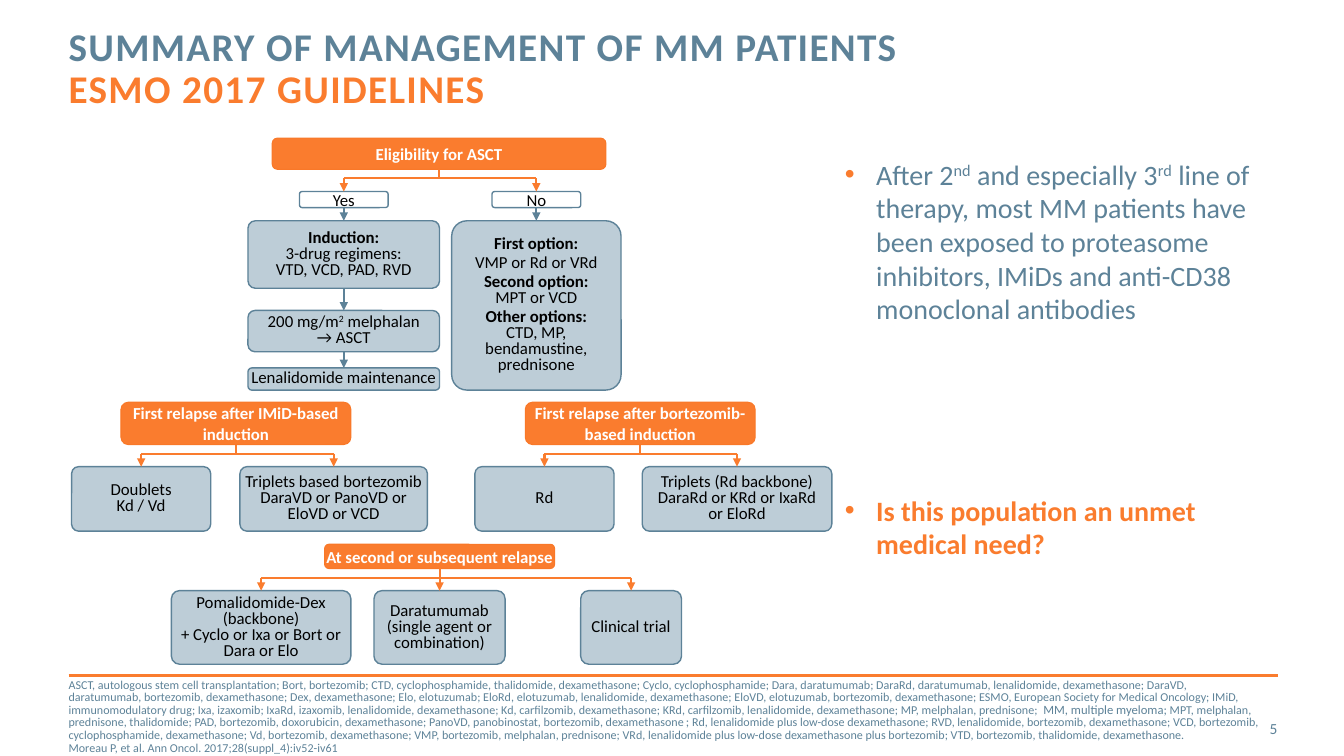
"""Build the slide on management of MM patients."""
from copy import deepcopy

from lxml import etree
from pptx import Presentation, util as u
from pptx.dml.color import RGBColor
from pptx.enum import shapes, text
from pptx.oxml.ns import qn

PX = 9144
THEME = {
    "font": "Calibri", "orange": "FA7C2E", "edge": "F97828", "slate": "5D8298",
    "mist": "BDCDD7", "white": "FFFFFF", "black": "000000",
    "title": 28, "body": 20, "label": 12, "note": 8.6, "note_large": 9, "number": 11,
}
HEADER = {"fill": "orange", "line": "edge", "weight": 0.75, "ink": "white", "bold": True, "spacing": 1.0}
ANSWER = {"fill": "white", "line": "slate", "weight": 1, "ink": "black", "bold": False, "spacing": 1.0}
STEP = dict(ANSWER, fill="mist", spacing=0.8)
BOLD, SUPER = {"bold": True}, {"baseline": "30000"}
CENTER, LEFT = text.PP_ALIGN.CENTER, text.PP_ALIGN.LEFT
TOP, MIDDLE = text.MSO_ANCHOR.TOP, text.MSO_ANCHOR.MIDDLE

NOTES = [
    ("ASCT, autologous stem cell transplantation; Bort, bortezomib; CTD, cyclophosphamide, thalidomide, "
     "dexamethasone; Cyclo, cyclophosphamide; Dara, daratumumab; DaraRd, daratumumab, lenalidomide, "
     "dexamethasone; DaraVD, daratumumab, bortezomib, dexamethasone; Dex, dexamethasone; Elo, elotuzumab; "
     "EloRd, elotuzumab, lenalidomide, dexamethasone; EloVD, elotuzumab, bortezomib, dexamethasone; ESMO, "
     "European Society for Medical Oncology; IMiD, immunomodulatory drug; Ixa, izaxomib; IxaRd, izaxomib, "
     "lenalidomide, dexamethasone; Kd, carfilzomib, dexamethasone; KRd, carfilzomib, lenalidomide, "
     "dexamethasone; MP, melphalan, prednisone; ", {}),
    ("MM, multiple myeloma; ", {"size": "note_large"}),
    ("MPT, melphalan, prednisone, thalidomide; PAD, bortezomib, doxorubicin, dexamethasone; PanoVD, "
     "panobinostat, bortezomib, dexamethasone", {}),
    ("; ", {"size": "note_large"}),
    ("Rd, lenalidomide plus low-dose dexamethasone; RVD, lenalidomide, bortezomib, dexamethasone; VCD, "
     "bortezomib, cyclophosphamide, dexamethasone; Vd, bortezomib, dexamethasone; VMP, bortezomib, melphalan, "
     "prednisone; VRd, lenalidomide plus low-dose dexamethasone plus bortezomib; VTD, bortezomib, thalidomide, "
     "dexamethasone.\nMoreau P, et al. Ann Oncol. 2017;28(suppl_4):iv52-iv61", {}),
]


def color(name):
    """Return a theme colour."""
    return RGBColor.from_string(THEME[name])


def apply(target, values):
    """Set each named attribute on the target."""
    for name, value in values.items():
        setattr(target, name, value)


def place(shape, box):
    """Move a shape to a box given in px."""
    apply(shape, dict(zip(("left", "top", "width", "height"), (side * PX for side in box))))


def write(para, spans, style):
    """Add formatted spans to a paragraph, with breaks at newlines."""
    for words, changes in spans:
        look = {**style, **changes}
        for row, line in enumerate(words.split("\n")):
            if row:
                para.add_line_break()
                para._p[-1].append(deepcopy(span._r.rPr))
            if not line:
                continue
            span = para.add_run()
            span.text = line
            apply(span.font, {"name": THEME["font"], "size": u.Pt(THEME[look["size"]]),
                              "bold": look.get("bold", False)})
            span.font.color.rgb = color(look["ink"])
            for name in ("spc", "baseline"):
                if name in look:
                    span._r.rPr.set(name, look[name])


def fill_frame(shape, paras, style, anchor, layout):
    """Write paragraphs into a shape without insets."""
    frame = shape.text_frame
    apply(frame, {"word_wrap": True, "auto_size": text.MSO_AUTO_SIZE.NONE, "vertical_anchor": anchor,
                  "margin_left": 0, "margin_top": 0, "margin_right": 0, "margin_bottom": 0})
    for row, spans in enumerate(paras):
        para = frame.add_paragraph() if row else frame.paragraphs[0]
        apply(para, layout)
        write(para, spans, style)
    return frame.paragraphs


def set_bullet(para, hang, mark=None):
    """Give a paragraph a hanging bullet, or none."""
    props = para._p.get_or_add_pPr()
    props.set("marL", str(hang * PX))
    props.set("indent", str(-hang * PX))
    if mark:
        tint = etree.SubElement(props, qn("a:buClr"))
        etree.SubElement(tint, qn("a:srgbClr"), val=THEME["orange"])
        etree.SubElement(props, qn("a:buChar"), char=mark)
    else:
        etree.SubElement(props, qn("a:buNone"))


def add_node(page, box, paras, look, corner=0.17, after=0):
    """Draw a rounded box with centred text."""
    node = page.shapes.add_shape(shapes.MSO_SHAPE.ROUNDED_RECTANGLE, *(side * PX for side in box))
    node.adjustments[0] = corner
    node.shadow.inherit = False
    node.fill.solid()
    node.fill.fore_color.rgb = color(look["fill"])
    node.line.color.rgb = color(look["line"])
    node.line.width = u.Pt(look["weight"])
    paras = [[(paras, {})]] if isinstance(paras, str) else paras
    fill_frame(node, paras, {"size": "label", "ink": look["ink"], "bold": look["bold"]}, MIDDLE,
               {"alignment": CENTER, "line_spacing": look["spacing"], "space_after": u.Pt(after)})
    return node


def add_link(page, ends, tint, weight=1.5, arrow=False, source=None, target=None):
    """Draw a straight line, joined to the source's bottom and target's top."""
    link = page.shapes.add_connector(shapes.MSO_CONNECTOR.STRAIGHT, *ends)
    link.line.color.rgb = color(tint)
    link.line.width = u.Pt(weight)
    if source:
        link.begin_connect(source, 2)
    if target:
        link.end_connect(target, 0)
    if arrow:
        etree.SubElement(link.line._get_or_add_ln(), qn("a:tailEnd"), type="triangle")
    etree.SubElement(link._element.spPr, qn("a:effectLst"))


def add_branches(page, header, children):
    """Join a header to its children through a horizontal bar."""
    bar = children[0].top - 13 * PX
    centers = [child.left + child.width // 2 for child in children]
    middle = header.left + header.width // 2
    add_link(page, (middle, bar, middle, bar), "orange", source=header)
    add_link(page, (centers[0], bar, centers[-1], bar), "orange")
    for center, child in zip(centers, children):
        add_link(page, (center, bar, center, bar), "orange", arrow=True, target=child)


def add_relapse(page, box, title, header_left, header_height, child_height, options):
    """Place a relapse header above its treatment options."""
    left, top, width, height = box
    header = add_node(page, (left + header_left, top, 228, header_height), title, HEADER)
    children = [add_node(page, (left + shift, top + height - child_height, span, child_height), words, STEP, 0.11)
                for shift, span, words in options]
    add_branches(page, header, children)


def add_eligibility(page, box):
    """Place the first-line pathway for eligible and ineligible patients."""
    left, top, width, height = box
    header = add_node(page, (left + 24, top, 331, 31), "Eligibility for ASCT", HEADER)
    answers = [add_node(page, (left + shift, top + 53, 88, 16), words, ANSWER)
               for shift, words in ((51, "Yes"), (242, "No"))]
    add_branches(page, header, answers)
    induction = [[("Induction:", BOLD)], [("3-drug regimens:\nVTD, VCD, PAD, RVD", {})]]
    transplant = [[("200 mg/m", {}), ("2", SUPER), (" melphalan\n→ ASCT", {})]]
    steps = [add_node(page, (left, top + drop, 190, tall), words, STEP, corner)
             for drop, tall, words, corner in ((82, 67, induction, 0.11), (171, 41, transplant, 0.17),
                                               (228, 22, "Lenalidomide maintenance", 0.17))]
    options = add_node(page, (left + 202, top + 82, 168, 168), [
        [("First option:", BOLD)], [("VMP or Rd or VRd", {})],
        [("Second option:\n", BOLD), ("MPT or VCD", {})],
        [("Other options:\n", BOLD), ("CTD, MP, bendamustine, prednisone", {})]], STEP, 0.09, 2)
    for source, target in [(answers[0], steps[0]), *zip(steps, steps[1:]), (answers[1], options)]:
        add_link(page, (0, 0, 0, 0), "slate", arrow=True, source=source, target=target)


def add_title(page, box):
    """Fill the title placeholder."""
    place(page.shapes.title, box)
    fill_frame(page.shapes.title, [[("SUMMARY OF MANAGEMENT OF MM PATIENTS\n", {}),
                                    ("ESMO 2017 GUIDELINES", {"ink": "orange"})]],
               {"size": "title", "ink": "slate", "bold": True, "spc": "100"}, TOP,
               {"alignment": LEFT, "line_spacing": u.Pt(30), "space_before": u.Pt(0)})


def add_messages(page, box):
    """Fill the body placeholder with the two key messages."""
    body = page.placeholders[1]
    place(body, box)
    paras = fill_frame(body, [
        [("After 2", {}), ("nd", SUPER), (" and especially 3", {}), ("rd", SUPER),
         (" line of therapy, most MM patients have been exposed to proteasome inhibitors, "
          "IMiDs and anti-CD38 monoclonal antibodies", {})],
        [("Is this population an unmet medical need?", {"ink": "orange", "bold": True})]],
        {"size": "body", "ink": "slate"}, TOP, {"alignment": LEFT})
    for para, gap in zip(paras, (0, 120)):
        para.space_before = u.Pt(gap)
        set_bullet(para, 31, "•")


def add_footer(page, box):
    """Place the rule, abbreviations and page number."""
    left, top, width, height = box
    add_link(page, [side * PX for side in (left, top, left + width, top)], "orange", 2)
    notes = page.placeholders[2]
    place(notes, (left, top + 21, 1184, 40))
    paras = fill_frame(notes, [NOTES], {"size": "note", "ink": "slate"}, MIDDLE,
                       {"alignment": LEFT, "line_spacing": u.Pt(9), "space_before": u.Pt(0)})
    set_bullet(paras[0], 0)
    number = page.shapes.add_textbox(*(side * PX for side in (left + width - 87, top + 33, 86, 40)))
    fill_frame(number, [[("5", {})]], {"size": "number", "ink": "slate"}, MIDDLE,
               {"alignment": text.PP_ALIGN.RIGHT})


def main():
    """Build and save the deck."""
    deck = Presentation()
    apply(deck, {"slide_width": 1333 * PX, "slide_height": 750 * PX})
    page = deck.slides.add_slide(deck.slide_layouts[3])
    add_title(page, (68, 27, 956, 88))
    add_messages(page, (838, 156, 428, 495))
    add_eligibility(page, (246, 137, 370, 250))
    add_relapse(page, (71, 399, 353, 128), "First relapse after IMiD-based induction", 49, 42, 64,
                [(0, 138, "Doublets\nKd / Vd"),
                 (167, 186, "Triplets based bortezomib\nDaraVD or PanoVD or\nEloVD or VCD")])
    add_relapse(page, (471, 399, 354, 128), "First relapse after bortezomib-based induction", 50, 42, 64,
                [(0, 138, "Rd"), (166, 188, "Triplets (Rd backbone)\nDaraRd or KRd or IxaRd\nor EloRd")])
    add_relapse(page, (170, 540, 506, 119), "At second or subsequent relapse", 152, 24, 73,
                [(0, 178, "Pomalidomide-Dex (backbone)\n+ Cyclo or Ixa or Bort or\nDara or Elo"),
                 (201, 130, "Daratumumab\n(single agent or\ncombination)"), (406, 100, "Clinical trial")])
    add_footer(page, (68, 670, 1200, 80))
    deck.save("out.pptx")


if __name__ == "__main__":
    main()
